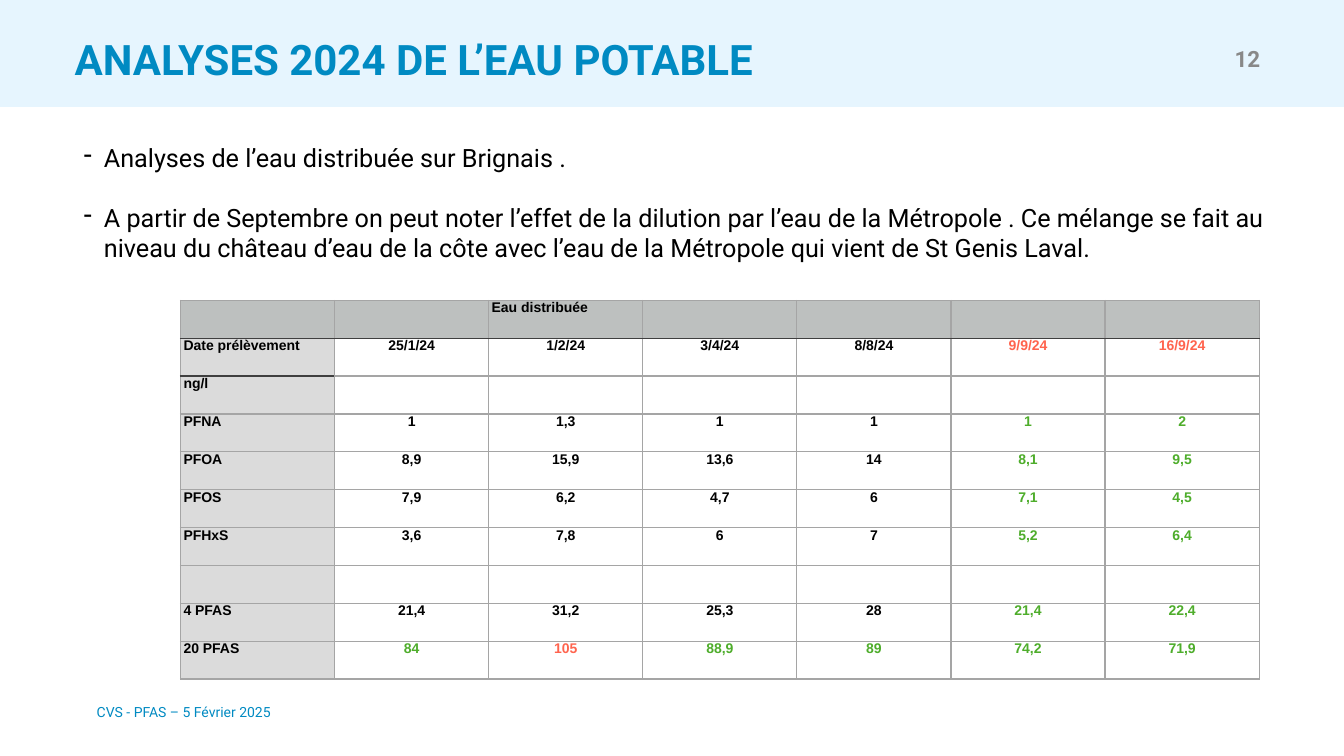
from dataclasses import dataclass

from lxml import etree
from pptx import Presentation
from pptx.dml.color import RGBColor
from pptx.enum.shapes import MSO_SHAPE
from pptx.enum.text import MSO_ANCHOR, PP_ALIGN
from pptx.oxml.ns import qn
from pptx.util import Emu, Inches, Pt

LEFT, CENTER, RIGHT = PP_ALIGN.LEFT, PP_ALIGN.CENTER, PP_ALIGN.RIGHT
TOP, MIDDLE = MSO_ANCHOR.TOP, MSO_ANCHOR.MIDDLE
RECTANGLE = MSO_SHAPE.RECTANGLE
SLIDE_WIDTH, SLIDE_HEIGHT = Inches(13.33), Inches(7.5)


@dataclass(frozen=True)
class Theme:
    font: str = "Roboto"
    table_font: str = "Arial"
    blue: str = "008AC2"
    band: str = "E6F5FE"
    page_grey: str = "888888"
    black: str = "000000"
    white: str = "FFFFFF"
    header_fill: str = "BDC0BF"
    label_fill: str = "DBDBDB"
    grid: str = "A5A5A5"
    header_rule: str = "3F3F3F"
    green: str = "4EAD2B"
    red: str = "FF644E"
    title_size: int = 30
    body_size: int = 18
    page_size: int = 16
    small_size: int = 10


THEME = Theme()


@dataclass(frozen=True)
class Area:
    """Percentages of the slide's width and height."""
    left: float
    top: float
    width: float
    height: float

    def box(self) -> tuple[Emu, Emu, Emu, Emu]:
        return (Emu(int(SLIDE_WIDTH * self.left / 100)),
                Emu(int(SLIDE_HEIGHT * self.top / 100)),
                Emu(int(SLIDE_WIDTH * self.width / 100)),
                Emu(int(SLIDE_HEIGHT * self.height / 100)))


@dataclass(frozen=True)
class TextBlock:
    area: Area
    paragraphs: tuple[str, ...]
    size: int
    color: str
    bold: bool = False
    align: PP_ALIGN = LEFT
    anchor: MSO_ANCHOR = MIDDLE
    inset: float = 0
    wrap: bool = True
    dashed: bool = False


BAND = Area(0, 0, 100, 14.13)
RESULTS_AREA = Area(13.43, 39.73, 80.27, 50.13)

TEXT_BLOCKS = (
    TextBlock(Area(7.2, 93.07, 40.74, 2.27), ("CVS - PFAS – 5 Février 2025",),
              THEME.small_size, THEME.blue),
    TextBlock(Area(91.45, 5.33, 2.7, 4.8), ("12",), THEME.page_size,
              THEME.page_grey, bold=True, align=RIGHT, inset=0.05, wrap=False),
    TextBlock(Area(5.55, 4.4, 90.77, 6.67), ("ANALYSES 2024 DE L’EAU POTABLE",),
              THEME.title_size, THEME.blue, bold=True),
    TextBlock(Area(6.23, 18.8, 88.82, 16.27), (
        "Analyses de l’eau distribuée sur Brignais .",
        "A partir de Septembre on peut noter l’effet de la dilution par l’eau de "
        "la Métropole . Ce mélange se fait au niveau du château d’eau de la côte "
        "avec l’eau de la Métropole qui vient de St Genis Laval.",
    ), THEME.body_size, THEME.black, anchor=TOP, dashed=True),
)

RESULTS = (
    ("", "", "Eau distribuée", "", "", "", ""),
    ("Date prélèvement", "25/1/24", "1/2/24", "3/4/24", "8/8/24", "9/9/24", "16/9/24"),
    ("ng/l", "", "", "", "", "", ""),
    ("PFNA", "1", "1,3", "1", "1", "1", "2"),
    ("PFOA", "8,9", "15,9", "13,6", "14", "8,1", "9,5"),
    ("PFOS", "7,9", "6,2", "4,7", "6", "7,1", "4,5"),
    ("PFHxS", "3,6", "7,8", "6", "7", "5,2", "6,4"),
    ("", "", "", "", "", "", ""),
    ("4 PFAS", "21,4", "31,2", "25,3", "28", "21,4", "22,4"),
    ("20 PFAS", "84", "105", "88,9", "89", "74,2", "71,9"),
)
HEADER_ROW, DATE_ROW, TOTAL_ROW = 0, 1, len(RESULTS) - 1
FIRST_DILUTED_COLUMN = 5
TOTAL_LIMIT = 100


def apply_format(target: object, values: dict[str, object]) -> None:
    for name, value in values.items():
        setattr(target, name, value)


def write(paragraph, text: str, font: str, size: int, color: str, bold: bool) -> None:
    run = paragraph.add_run()
    run.text = text
    apply_format(run.font, {"name": font, "size": Pt(size), "bold": bold})
    run.font.color.rgb = RGBColor.from_string(color)


def add_dash(paragraph) -> None:
    properties = paragraph._p.get_or_add_pPr()
    properties.set("marL", str(Inches(0.2)))
    properties.set("indent", str(-Inches(0.2)))
    etree.SubElement(properties, qn("a:buChar"), char="-")


def add_text(slide, block: TextBlock) -> None:
    frame = slide.shapes.add_textbox(*block.area.box()).text_frame
    inset = Inches(block.inset)
    apply_format(frame, {
        "word_wrap": block.wrap, "vertical_anchor": block.anchor,
        "margin_left": inset, "margin_right": inset,
        "margin_top": inset, "margin_bottom": inset,
    })
    for index, text in enumerate(block.paragraphs):
        paragraph = frame.add_paragraph() if index else frame.paragraphs[0]
        if block.dashed:
            add_dash(paragraph)
        paragraph.alignment = block.align
        if index:
            paragraph.space_before = Pt(21.4)
        write(paragraph, text, THEME.font, block.size, block.color, block.bold)


def result_color(row: int, column: int, text: str) -> str:
    diluted = column >= FIRST_DILUTED_COLUMN
    if column == 0 or row == HEADER_ROW or not text:
        return THEME.black
    if row == DATE_ROW:
        return THEME.red if diluted else THEME.black
    if row == TOTAL_ROW and float(text.replace(",", ".")) > TOTAL_LIMIT:
        return THEME.red
    return THEME.green if diluted or row == TOTAL_ROW else THEME.black


def ruled_below(row: int, column: int) -> bool:
    return row == HEADER_ROW or (row == DATE_ROW and column == 0)


def add_borders(cell, row: int, column: int) -> None:
    dark_sides = {"T": ruled_below(row - 1, column), "B": ruled_below(row, column)}
    for side in "LRTB":
        color = THEME.header_rule if dark_sides.get(side) else THEME.grid
        line = etree.SubElement(cell._tc.get_or_add_tcPr(), qn(f"a:ln{side}"),
                                w=str(Pt(1)))
        fill = etree.SubElement(line, qn("a:solidFill"))
        etree.SubElement(fill, qn("a:srgbClr"), val=color)


def add_results(slide) -> None:
    table = slide.shapes.add_table(len(RESULTS), len(RESULTS[0]),
                                   *RESULTS_AREA.box()).table
    apply_format(table, {"first_row": False, "horz_banding": False})
    margin = Inches(0.03)
    for row, texts in enumerate(RESULTS):
        for column, text in enumerate(texts):
            cell = table.cell(row, column)
            apply_format(cell, {"margin_left": margin, "margin_right": margin,
                                "margin_top": 0, "margin_bottom": margin})
            add_borders(cell, row, column)
            label_or_value = THEME.white if column else THEME.label_fill
            fill = THEME.header_fill if row == HEADER_ROW else label_or_value
            cell.fill.solid()
            cell.fill.fore_color.rgb = RGBColor.from_string(fill)
            if text:
                paragraph = cell.text_frame.paragraphs[0]
                paragraph.alignment = CENTER if column and row != HEADER_ROW else LEFT
                write(paragraph, text, THEME.table_font, THEME.small_size,
                      result_color(row, column, text), True)


def main() -> None:
    deck = Presentation()
    apply_format(deck, {"slide_width": SLIDE_WIDTH, "slide_height": SLIDE_HEIGHT})
    slide = deck.slides.add_slide(deck.slide_layouts[6])

    # Title band
    band = slide.shapes.add_shape(RECTANGLE, *BAND.box())
    band.shadow.inherit = False
    band.fill.solid()
    band.fill.fore_color.rgb = RGBColor.from_string(THEME.band)
    band.line.fill.background()

    # Footer, page number, title and remarks
    for block in TEXT_BLOCKS:
        add_text(slide, block)

    # Water analysis results
    add_results(slide)
    deck.save("out.pptx")


if __name__ == "__main__":
    main()
